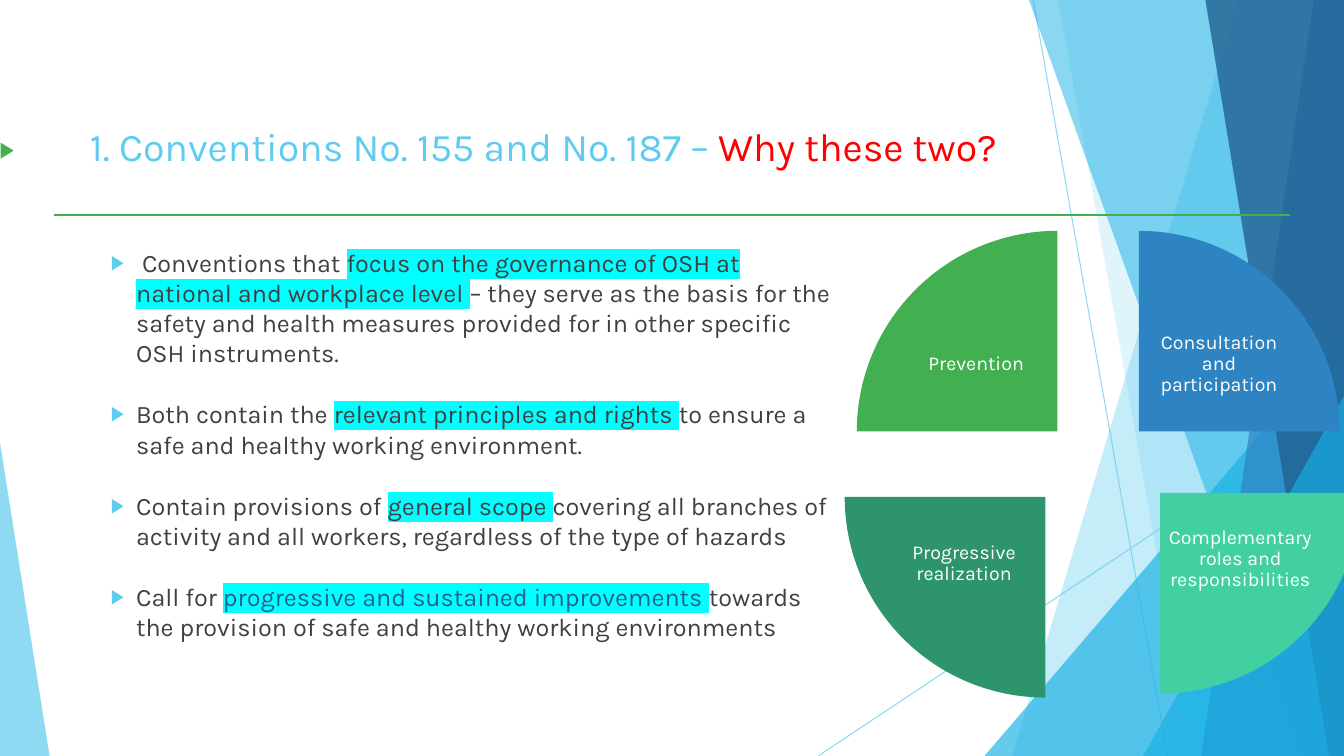
"""Build a slide on why Conventions No. 155 and No. 187 were chosen."""
from lxml import etree
from pptx import Presentation
from pptx.dml.color import RGBColor
from pptx.enum.shapes import MSO_CONNECTOR, MSO_SHAPE
from pptx.enum.text import MSO_ANCHOR, MSO_AUTO_SIZE, PP_ALIGN
from pptx.oxml.ns import qn
from pptx.util import Inches, Pt

STRAIGHT = MSO_CONNECTOR.STRAIGHT
TRIANGLE, PIE = MSO_SHAPE.ISOSCELES_TRIANGLE, MSO_SHAPE.PIE
TOP, MIDDLE = MSO_ANCHOR.TOP, MSO_ANCHOR.MIDDLE
LEFT, CENTER = PP_ALIGN.LEFT, PP_ALIGN.CENTER
FIXED = MSO_AUTO_SIZE.NONE

COLUMNS, ROWS = 160, 90
CELLS_PER_INCH = 12
FONT = "Karla"
COLOURS = {
    "sky": "5FCBEF", "cyan": "17B0E4", "blue": "2E83C3", "navy": "226292",
    "green": "42B051", "mint": "42D0A2", "forest": "2E946B", "red": "FF0000",
    "text": "404040", "white": "FFFFFF", "marker": "00FFFF",
}


def cells(*counts):
    """Turn grid counts into lengths."""
    return [Inches(count / CELLS_PER_INCH) for count in counts]


def paint(shape, colour, opacity=100):
    """Give a shape a flat fill, no outline and no shadow."""
    shape.shadow.inherit = False
    shape.line.fill.background()
    shape.fill.solid()
    shape.fill.fore_color.rgb = RGBColor.from_string(COLOURS[colour])
    if opacity < 100:
        tint = shape._element.spPr.find(".//" + qn("a:srgbClr"))
        etree.SubElement(tint, qn("a:alpha"), val=str(opacity * 1000))


deck = Presentation()
deck.slide_width, deck.slide_height = cells(COLUMNS, ROWS)
page = deck.slides.add_slide(deck.slide_layouts[1])
shapes = page.shapes

backdrop = [
    ("line", "sky", 70, (123, 0, 139, 90), 0.75),
    ("line", "sky", 70, (160, 48.4, 97.4, 90), 0.75),
    ("facet", "sky", 36, (147.4, 120.5), None),
    ("facet", "sky", 20, (126, 142), None),
    ("triangle", "cyan", 66, (117.2, 40, 42.8, 50), 1),
    ("facet", "cyan", 50, (122.5, 154.9), None),
    ("facet", "blue", 70, (156.4, 143), None),
    ("facet", "navy", 80, (143.5, 158.2), None),
    ("triangle", "cyan", 66, (136.1, 47.1, 23.9, 42.9), 1),
    ("triangle", "sky", 70, (0, 52.7, 5.9, 37.3), 0),
    ("line", "green", 100, (6.4, 25.55, 153.6, 25.55), 1.5),
]
for kind, colour, opacity, place, setting in backdrop:
    if kind == "line":
        line = shapes.add_connector(STRAIGHT, *cells(*place))
        line.line.width = Pt(setting)
        line.line.color.rgb = RGBColor.from_string(COLOURS[colour])
        tint = line._element.spPr.find(".//" + qn("a:srgbClr"))
        etree.SubElement(tint, qn("a:alpha"), val=str(opacity * 1000))
        etree.SubElement(line._element.spPr, qn("a:effectLst"))
    elif kind == "facet":
        upper, lower = place
        outline = shapes.build_freeform(*cells(upper, 0))
        corners = [(COLUMNS, 0), (COLUMNS, ROWS), (lower, ROWS)]
        outline.add_line_segments([cells(*corner) for corner in corners])
        paint(outline.convert_to_shape(), colour, opacity)
    else:
        triangle = shapes.add_shape(TRIANGLE, *cells(*place))
        triangle.adjustments[0] = setting
        paint(triangle, colour, opacity)

pointer = shapes.add_shape(TRIANGLE, *cells(-0.12, 17.16, 1.92, 1.56))
pointer.rotation = 90
paint(pointer, "green")

texts = []
title = shapes.title
title.left, title.top, title.width, title.height = cells(9.5, 13.9, 122, 9.7)
title.text_frame.vertical_anchor = TOP
title.text_frame.auto_size = FIXED
para = title.text_frame.paragraphs[0]
para.alignment = LEFT
texts.append((para, 28, [
    ("1. Conventions No. 155 and No. 187 – ", "sky", False),
    ("Why these two?", "red", False),
]))

points = [
    (" Conventions that ", "focus on the governance of OSH at national and workplace level ",
     "– they serve as the basis for the safety and health measures provided for "
     "in other specific OSH instruments.", "text"),
    ("Both contain the ", "relevant principles and rights ",
     "to ensure a safe and healthy working environment.", "text"),
    ("Contain provisions of ", "general scope ",
     "covering all branches of activity and all workers, regardless of the type of hazards",
     "text"),
    ("Call for ", "progressive and sustained improvements ",
     "towards the provision of safe and healthy working environments", "navy"),
]
body = page.placeholders[1]
body.left, body.top, body.width, body.height = cells(0, 28.8, 100.7, 58.8)
frame = body.text_frame
frame.auto_size = FIXED
frame.vertical_anchor = TOP
for number, (opening, stressed, closing, colour) in enumerate(points):
    para = frame.add_paragraph() if number else frame.paragraphs[0]
    para.level = 2
    para.space_before = Pt(10 if number else 0)
    para.space_after = Pt(12)
    layout = para._p.get_or_add_pPr()
    layout.set("marL", str(Inches(1.25)))
    layout.set("indent", str(Inches(-0.25)))
    bullet_colour = etree.SubElement(layout, qn("a:buClr"))
    etree.SubElement(bullet_colour, qn("a:srgbClr"), val=COLOURS["sky"])
    etree.SubElement(layout, qn("a:buSzPct"), val="80000")
    etree.SubElement(layout, qn("a:buChar"), char="▶")
    texts.append((para, 18, [
        (opening, "text", False), (stressed, colour, True), (closing, "text", False),
    ]))

DIAMETER = 47.76
QUARTER, FULL_TURN = 54, 216
quadrants = [
    ("Consultation and participation", "blue", 111.72, 27.48, 162),
    ("Complementary roles and responsibilities", "mint", 114.24, 34.8, 0),
    ("Progressive realization", "forest", 100.56, 35.28, 54),
    ("Prevention", "green", 102, 27.48, 108),
]
for label, colour, left, top, start in quadrants:
    quadrant = shapes.add_shape(PIE, *cells(left, top, DIAMETER, DIAMETER))
    quadrant.adjustments[0] = start
    quadrant.adjustments[1] = (start + QUARTER) % FULL_TURN
    paint(quadrant, colour)
    label_left = left + (24.6 if start in (0, 162) else 5.4)
    label_top = top + (24.72 if start in (0, 54) else 8.76)
    box = shapes.add_textbox(*cells(label_left, label_top, 17.64, 14.16))
    frame = box.text_frame
    frame.word_wrap = True
    frame.vertical_anchor = MIDDLE
    frame.margin_left = frame.margin_right = Inches(0.02)
    frame.margin_top = frame.margin_bottom = Inches(0.02)
    para = frame.paragraphs[0]
    para.alignment = CENTER
    para.line_spacing = 0.9
    texts.append((para, 14, [(label, "white", False)]))

for para, size, pieces in texts:
    for words, colour, highlighted in pieces:
        span = para.add_run()
        span.text = words
        span.font.size = Pt(size)
        span.font.name = FONT
        span.font.color.rgb = RGBColor.from_string(COLOURS[colour])
        if highlighted:
            highlight = etree.Element(qn("a:highlight"))
            etree.SubElement(highlight, qn("a:srgbClr"), val=COLOURS["marker"])
            span._r.rPr.find(qn("a:solidFill")).addnext(highlight)

deck.save("out.pptx")
